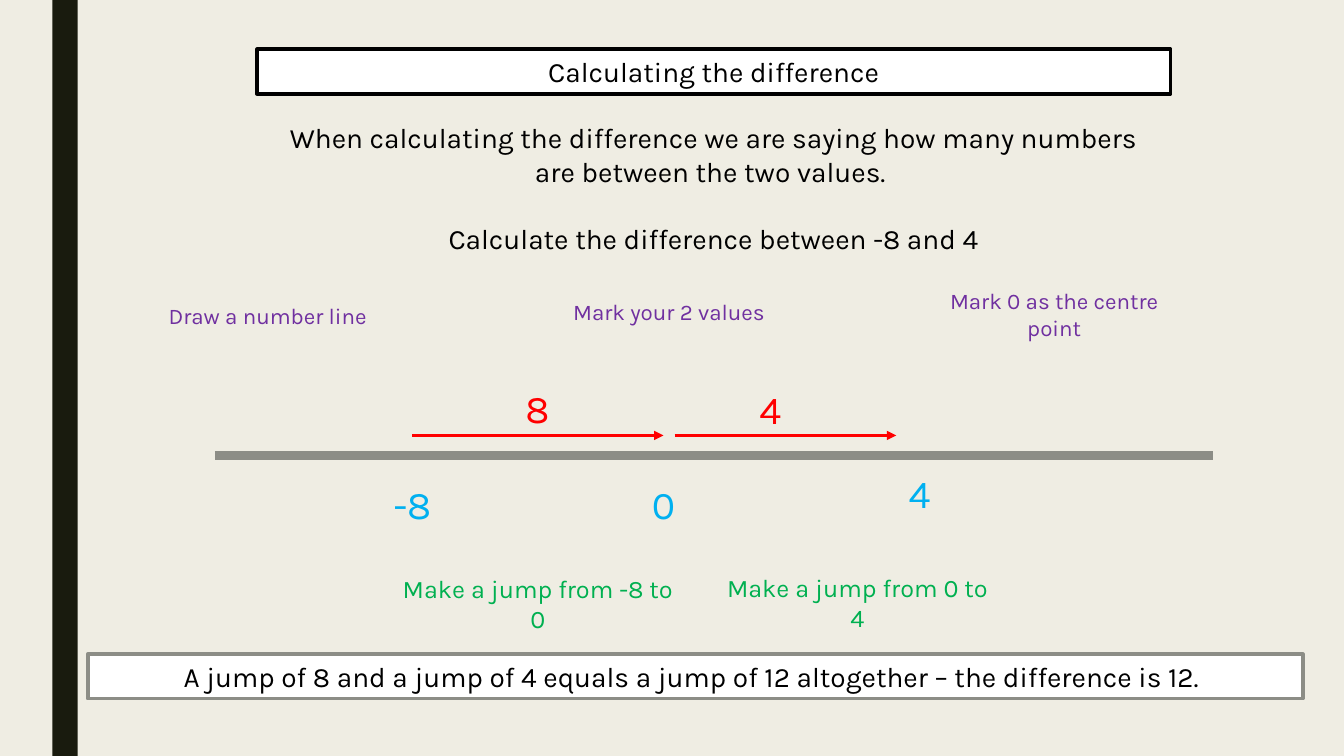
from lxml import etree
from pptx import Presentation
from pptx.dml.color import RGBColor
from pptx.enum.shapes import MSO_CONNECTOR, MSO_SHAPE
from pptx.enum.text import MSO_ANCHOR, MSO_AUTO_SIZE, PP_ALIGN
from pptx.oxml.ns import qn
from pptx.util import Inches, Pt

FONT = "Karla"
BLACK, WHITE, GREY = "000000", "FFFFFF", "8C8D86"
PURPLE, BLUE, GREEN, RED = "7030A0", "00B0F0", "00B050", "FF0000"


def color(hex_value):
    return RGBColor.from_string(hex_value)


def write(shape, text, size, text_color):
    frame = shape.text_frame
    frame.text = text
    frame.word_wrap = True
    frame.auto_size = MSO_AUTO_SIZE.NONE
    frame.margin_left = frame.margin_right = Inches(0.1)
    frame.margin_top = frame.margin_bottom = Inches(0.05)
    paragraph = frame.paragraphs[0]
    paragraph.alignment = PP_ALIGN.CENTER
    paragraph.font.name = FONT
    paragraph.font.size = Pt(size)
    paragraph.font.color.rgb = color(text_color)


def add_text(slide, box, text, size, text_color):
    shape = slide.shapes.add_textbox(*map(Inches, box))
    write(shape, text, size, text_color)
    shape.text_frame.vertical_anchor = MSO_ANCHOR.TOP


def frame_box(shape, border):
    shape.fill.solid()
    shape.fill.fore_color.rgb = color(WHITE)
    shape.line.color.rgb = color(border)
    shape.line.width = Pt(2.75)


def add_line(slide, start, end, y, line_color, width, arrow=False):
    connector = slide.shapes.add_connector(
        MSO_CONNECTOR.STRAIGHT, Inches(start), Inches(y), Inches(end), Inches(y))
    connector.line.color.rgb = color(line_color)
    connector.line.width = Pt(width)
    properties = connector.line._get_or_add_ln()
    if arrow:
        etree.SubElement(properties, qn("a:tailEnd"), type="triangle")
    etree.SubElement(properties.getparent(), qn("a:effectLst"))


def add_background(slide):
    slide.background.fill.solid()
    slide.background.fill.fore_color.rgb = color("EFEDE3")
    bar = slide.shapes.add_shape(
        MSO_SHAPE.RECTANGLE, Inches(0.52), 0, Inches(0.25), Inches(7.5))
    bar.shadow.inherit = False
    bar.fill.solid()
    bar.fill.fore_color.rgb = color("191B0E")
    bar.line.fill.background()


def add_heading(slide, left, top, width):
    """Place the framed title with the explanation and the question below it."""
    title = slide.shapes.title
    title.left, title.top = Inches(left), Inches(top)
    title.width, title.height = Inches(width), Inches(0.44)
    frame_box(title, BLACK)
    write(title, "Calculating the difference", 20, BLACK)
    title.text_frame.vertical_anchor = MSO_ANCHOR.MIDDLE
    add_text(slide, (left, top + 0.66, width, 0.77),
             "When calculating the difference we are saying how many numbers "
             "are between the two values. ", 20, BLACK)
    add_text(slide, (left, top + 1.66, width, 0.44),
             "Calculate the difference between -8 and 4", 20, BLACK)


def add_steps(slide, left, top):
    steps = [
        (0, 0.15, 0.37, "Draw a number line"),
        (3.98, 0.11, 0.37, "Mark your 2 values"),
        (7.8, 0, 0.64, "Mark 0 as the centre point"),
    ]
    for x, y, height, text in steps:
        add_text(slide, (left + x, top + y, 2.31, height), text, 16, PURPLE)


def add_number_line(slide, left, y, width):
    """Place the line with its values and jumps, all measured from its left end."""
    add_line(slide, left, left + width, y, GREY, 6)
    for start, end in [(1.96, 4.45), (4.56, 6.76)]:
        add_line(slide, left + start, left + end, y - 0.2, RED, 2.25, arrow=True)
    numbers = [
        ("-8", 1.52, 0.2, BLUE), ("0", 4.01, 0.2, BLUE), ("4", 6.55, 0.09, BLUE),
        ("8", 2.76, -0.76, RED), ("4", 5.07, -0.75, RED),
    ]
    for text, x, offset, text_color in numbers:
        add_text(slide, (left + x, y + offset, 0.88, 0.57), text, 28, text_color)
    jumps = [("Make a jump from -8 to 0", 1.72, 1.12),
             ("Make a jump from 0 to 4", 4.89, 1.11)]
    for text, x, offset in jumps:
        add_text(slide, (left + x, y + offset, 2.97, 0.4), text, 18, GREEN)


def add_conclusion(slide, box):
    shape = slide.shapes.add_shape(MSO_SHAPE.RECTANGLE, *map(Inches, box))
    shape.shadow.inherit = False
    frame_box(shape, GREY)
    write(shape, "A jump of 8 and a jump of 4 equals a jump of 12 altogether "
          "– the difference is 12. ", 20, BLACK)


def main():
    presentation = Presentation()
    presentation.slide_width = Inches(13.33)
    presentation.slide_height = Inches(7.5)
    title_only = presentation.slide_layouts[5]
    slide = presentation.slides.add_slide(title_only)
    add_background(slide)
    add_heading(slide, 2.55, 0.49, 9.06)
    add_steps(slide, 1.5, 2.8)
    add_number_line(slide, 2.13, 4.52, 9.9)
    add_conclusion(slide, (0.87, 6.49, 12.05, 0.44))
    presentation.save("out.pptx")


if __name__ == "__main__":
    main()
